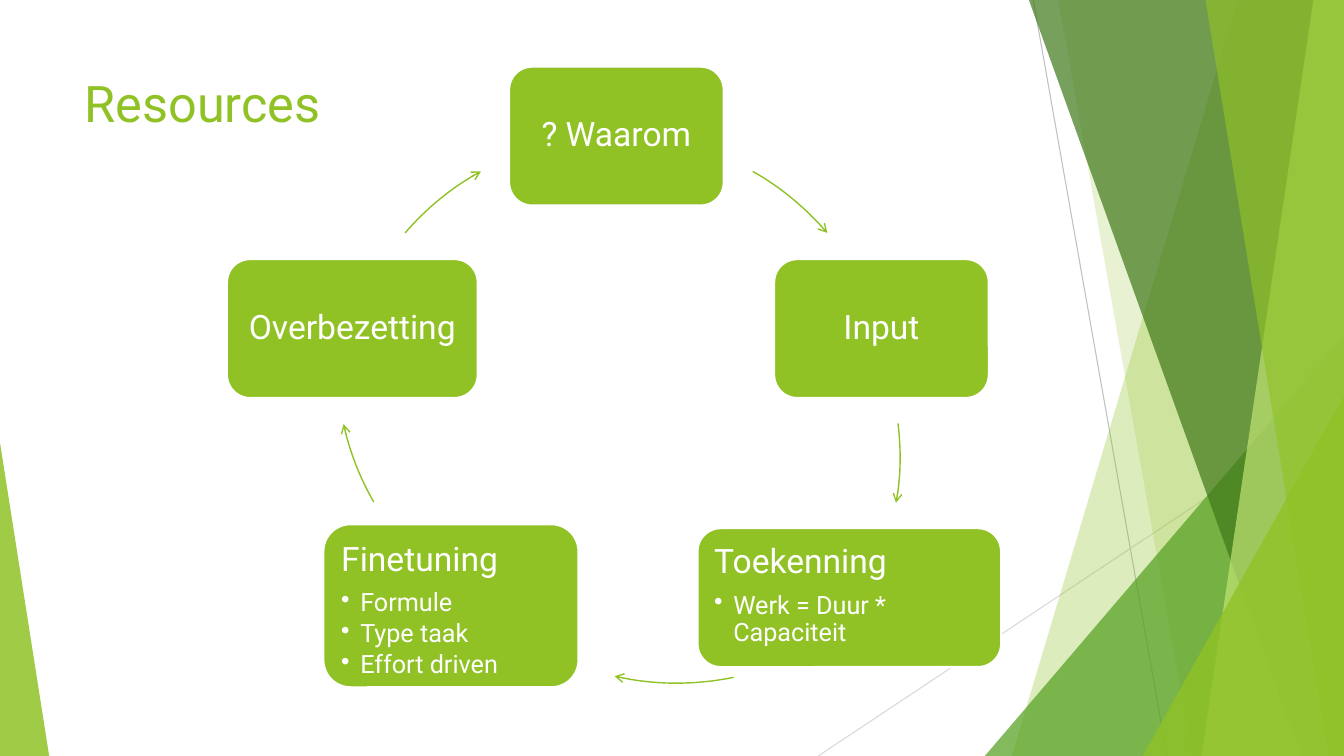
"""Build the Resources slide: a five-step cycle beside a green faceted border."""
import pptx
import pptx.dml.color
import pptx.enum.shapes
import pptx.enum.text
import pptx.oxml.ns
import pptx.oxml.xmlchemy
import pptx.util

Cm = pptx.util.Cm
Pt = pptx.util.Pt
RGBColor = pptx.dml.color.RGBColor
MSO_SHAPE = pptx.enum.shapes.MSO_SHAPE
PP_ALIGN = pptx.enum.text.PP_ALIGN
MSO_ANCHOR = pptx.enum.text.MSO_ANCHOR
OxmlElement = pptx.oxml.xmlchemy.OxmlElement
qn = pptx.oxml.ns.qn

WHITE = RGBColor(0xFF, 0xFF, 0xFF)
GREEN = RGBColor(0x90, 0xC2, 0x26)
MID_GREEN = RGBColor(0x54, 0xA0, 0x21)
DARK_GREEN = RGBColor(0x3F, 0x78, 0x19)
LIGHT_GREEN = RGBColor(0xC0, 0xE4, 0x74)
GREY = RGBColor(0xBF, 0xBF, 0xBF)
LIGHT_GREY = RGBColor(0xD9, 0xD9, 0xD9)
FONT = "Roboto"
WIDTH, HEIGHT = 33.87, 19.05
CURVE_STEPS = 16


def write(paragraph, text, size=24, color=WHITE, align=PP_ALIGN.LEFT,
          line_spacing=0.9, space_after=8.4, bullet=False):
    """Fill one paragraph with formatted text."""
    run = paragraph.add_run()
    run.text = text
    run.font.name = FONT
    run.font.size = Pt(size)
    run.font.color.rgb = color
    paragraph.alignment = align
    paragraph.line_spacing = line_spacing
    paragraph.space_before = Pt(0)
    paragraph.space_after = Pt(space_after)
    if bullet:
        properties = paragraph._p.get_or_add_pPr()
        properties.set("marL", str(Cm(0.48)))
        properties.set("indent", str(-Cm(0.48)))
        mark = OxmlElement("a:buChar")
        mark.set("char", "•")
        properties.append(mark)


def add_path(shapes, points, close):
    """Draw straight segments through points given in centimetres."""
    corners = [(Cm(x), Cm(y)) for x, y in points]
    builder = shapes.build_freeform(*corners[0])
    builder.add_line_segments(corners[1:], close=close)
    return builder.convert_to_shape()


presentation = pptx.Presentation()
presentation.slide_width = Cm(WIDTH)
presentation.slide_height = Cm(HEIGHT)
slide = presentation.slides.add_slide(presentation.slide_layouts[5])
shapes = slide.shapes

title = shapes.title
title.left, title.top, title.width, title.height = Cm(1.88), Cm(1.7), Cm(23.88), Cm(3.66)
title.text_frame.word_wrap = True
title.text_frame.vertical_anchor = MSO_ANCHOR.TOP
write(title.text_frame.paragraphs[0], "Resources", size=36, color=GREEN,
      line_spacing=1.0, space_after=0)

thin_lines = [
    (26.04, 0, 29.41, HEIGHT, GREY),
    (WIDTH, 10.24, 20.62, HEIGHT, LIGHT_GREY),
]
for start_x, start_y, end_x, end_y, color in thin_lines:
    line = shapes.add_connector(pptx.enum.shapes.MSO_CONNECTOR.STRAIGHT,
                                Cm(start_x), Cm(start_y), Cm(end_x), Cm(end_y))
    line.line.color.rgb = color
    line.line.width = Pt(0.75)
    line._element.spPr.append(OxmlElement("a:effectLst"))

facets = [
    (31.19, 25.5, 0, GREEN, 30),
    (26.67, 30.05, 0, GREEN, 20),
    (WIDTH, 24.82, 8.46, MID_GREEN, 72),
    (25.93, 32.79, 0, DARK_GREEN, 70),
    (33.1, 30.28, 0, LIGHT_GREEN, 70),
    (30.38, 33.48, 0, GREEN, 65),
    (WIDTH, 28.8, 9.98, GREEN, 80),
    (0, 1.24, 11.15, GREEN, 85),
]
for top_x, bottom_x, top_y, color, opacity in facets:
    if top_y:
        facet = shapes.add_shape(
            MSO_SHAPE.ISOSCELES_TRIANGLE, Cm(min(top_x, bottom_x)), Cm(top_y),
            Cm(abs(top_x - bottom_x)), Cm(HEIGHT - top_y))
        facet.adjustments[0] = 1 if top_x > bottom_x else 0
    else:
        facet = add_path(shapes, [(top_x, 0), (WIDTH, 0), (WIDTH, HEIGHT),
                                  (bottom_x, HEIGHT)], close=True)
    facet.shadow.inherit = False
    facet.fill.solid()
    facet.fill.fore_color.rgb = color
    facet.line.fill.background()
    alpha = OxmlElement("a:alpha")
    alpha.set("val", str(opacity * 1000))
    facet._element.spPr.find(qn("a:solidFill"))[0].append(alpha)

steps = [
    ("? Waarom", [], 12.83, 1.68, 5.41, 3.5),
    ("Input", [], 19.51, 6.53, 5.41, 3.5),
    ("Toekenning", ["Werk = Duur * Capaciteit"], 17.58, 13.31, 7.65, 3.5),
    ("Finetuning", ["Formule", "Type taak", "Effort driven"], 8.15, 13.21, 6.43, 4.11),
    ("Overbezetting", [], 5.72, 6.53, 6.32, 3.5),
]
for heading, details, left, top, width, height in steps:
    card = shapes.add_shape(MSO_SHAPE.ROUNDED_RECTANGLE,
                            Cm(left), Cm(top), Cm(width), Cm(height))
    card.shadow.inherit = False
    card.fill.solid()
    card.fill.fore_color.rgb = GREEN
    card.line.color.rgb = WHITE
    card.line.width = Pt(1.5)
    frame = card.text_frame
    frame.word_wrap = True
    frame.margin_left = frame.margin_right = Cm(0.25)
    frame.margin_top = frame.margin_bottom = Cm(0.25)
    frame.vertical_anchor = MSO_ANCHOR.TOP if details else MSO_ANCHOR.MIDDLE
    write(frame.paragraphs[0], heading,
          align=PP_ALIGN.LEFT if details else PP_ALIGN.CENTER)
    for detail in details:
        write(frame.add_paragraph(), detail, size=18, space_after=2.7, bullet=True)

arrow_curves = [
    [(18.97, 4.32), (19.69, 4.72), (20.32, 5.26), (20.85, 5.87)],
    [(22.63, 10.67), (22.71, 11.33), (22.71, 12.01), (22.58, 12.67)],
    [(18.49, 17.07), (17.5, 17.27), (16.48, 17.27), (15.49, 17.04)],
    [(9.42, 12.65), (9.07, 12.04), (8.81, 11.38), (8.66, 10.69)],
    [(10.21, 5.87), (10.74, 5.26), (11.38, 4.72), (12.12, 4.32)],
]
for controls in arrow_curves:
    points = []
    for step in range(CURVE_STEPS + 1):
        t = step / CURVE_STEPS
        weights = [(1 - t) ** 3, 3 * t * (1 - t) ** 2, 3 * t ** 2 * (1 - t), t ** 3]
        points.append([sum(weight * control[axis]
                           for weight, control in zip(weights, controls))
                       for axis in (0, 1)])
    arrow = add_path(shapes, points, close=False)
    arrow.shadow.inherit = False
    arrow.fill.background()
    arrow.line.color.rgb = GREEN
    arrow.line.width = Pt(1)
    tip = OxmlElement("a:tailEnd")
    tip.set("type", "arrow")
    arrow._element.spPr.find(qn("a:ln")).append(tip)

presentation.save("out.pptx")
